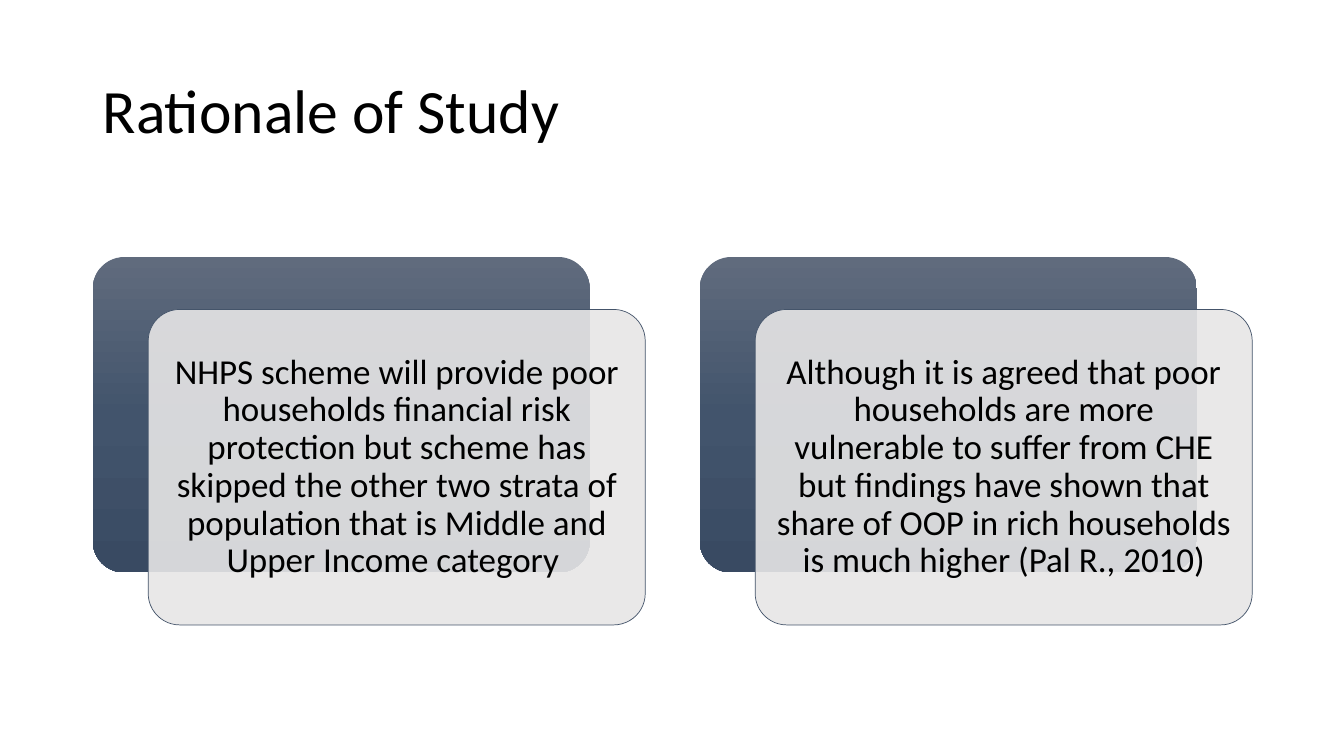
from copy import deepcopy

from lxml import etree
from pptx import Presentation
from pptx import util as u
from pptx.dml.color import RGBColor
from pptx.enum import shapes, text
from pptx.oxml.ns import qn

PX = 9144  # EMU per px, 100 px to the inch
COLORS = {
    "text": "000000",
    "card": "E7E6E6",
    "edge": "44546A",
    "top": "606B7D",
    "middle": "42546C",
    "bottom": "394A62",
}
CARD_W, CARD_H = 493, 313
LEFT, TOP, PITCH = 92, 255, 602
SHIFT_X, SHIFT_Y = 55, 52
REASONS = [
    "NHPS scheme will provide poor households financial risk protection but scheme has "
    "skipped the other two strata of population that is Middle and Upper Income category ",
    "Although it is agreed that poor households are more vulnerable to suffer from CHE but "
    "findings have shown that share of OOP in rich households is much higher (Pal R., 2010)",
]


def rgb(name):
    return RGBColor.from_string(COLORS[name])


def set_all(obj, values):
    for name, value in values.items():
        setattr(obj, name, value)


def write(sp, words, size, align, margin_x, margin_y):
    tf = sp.text_frame
    set_all(tf, {
        "word_wrap": True,
        "vertical_anchor": text.MSO_ANCHOR.MIDDLE,
        "margin_left": margin_x * PX,
        "margin_right": margin_x * PX,
        "margin_top": margin_y * PX,
        "margin_bottom": margin_y * PX,
    })
    p = tf.paragraphs[0]
    set_all(p, {"alignment": align, "line_spacing": 0.9})
    r = p.add_run()
    r.text = words
    set_all(r.font, {"name": "Calibri", "size": u.Pt(size)})
    r.font.color.rgb = rgb("text")


def add_title(s, words):
    sp = s.shapes.add_textbox(92 * PX, 40 * PX, 1150 * PX, 145 * PX)
    write(sp, words, 44, text.PP_ALIGN.LEFT, 10, 5)


def add_panel(s, x, y):
    sp = s.shapes.add_shape(shapes.MSO_SHAPE.ROUNDED_RECTANGLE,
                            x * PX, y * PX, CARD_W * PX, CARD_H * PX)
    sp.adjustments[0] = 0.1
    sp.shadow.inherit = False
    return sp


def add_backdrop(s, x, y):
    sp = add_panel(s, x, y)
    sp.line.fill.background()
    sp.fill.gradient()
    sp.fill.gradient_angle = 270  # counter-clockwise, so it runs top to bottom
    # The default gradient has two stops; add a third
    stops = sp._element.spPr.find(".//" + qn("a:gsLst"))
    stops.append(deepcopy(stops[0]))
    for stop, position, name in zip(sp.fill.gradient_stops, (0, 0.5, 1),
                                    ("top", "middle", "bottom")):
        stop.position = position
        stop.color.rgb = rgb(name)


def add_card(s, x, y, words):
    sp = add_panel(s, x, y)
    sp.fill.solid()
    sp.fill.fore_color.rgb = rgb("card")
    color = sp._element.spPr.find(qn("a:solidFill"))[0]
    etree.SubElement(color, qn("a:alpha"), val="90000")
    sp.line.color.rgb = rgb("edge")
    sp.line.width = u.Pt(0.5)
    write(sp, words, 25, text.PP_ALIGN.CENTER, 12, 10)


def main():
    prs = Presentation()
    set_all(prs, {"slide_width": 1333 * PX, "slide_height": 750 * PX})
    s = prs.slides.add_slide(prs.slide_layouts[6])

    add_title(s, "Rationale of Study")

    # Each reason is a card laid over a shifted backdrop
    for i, reason in enumerate(REASONS):
        x = LEFT + i * PITCH
        add_backdrop(s, x, TOP)
        add_card(s, x + SHIFT_X, TOP + SHIFT_Y, reason)

    prs.save("out.pptx")


if __name__ == "__main__":
    main()
